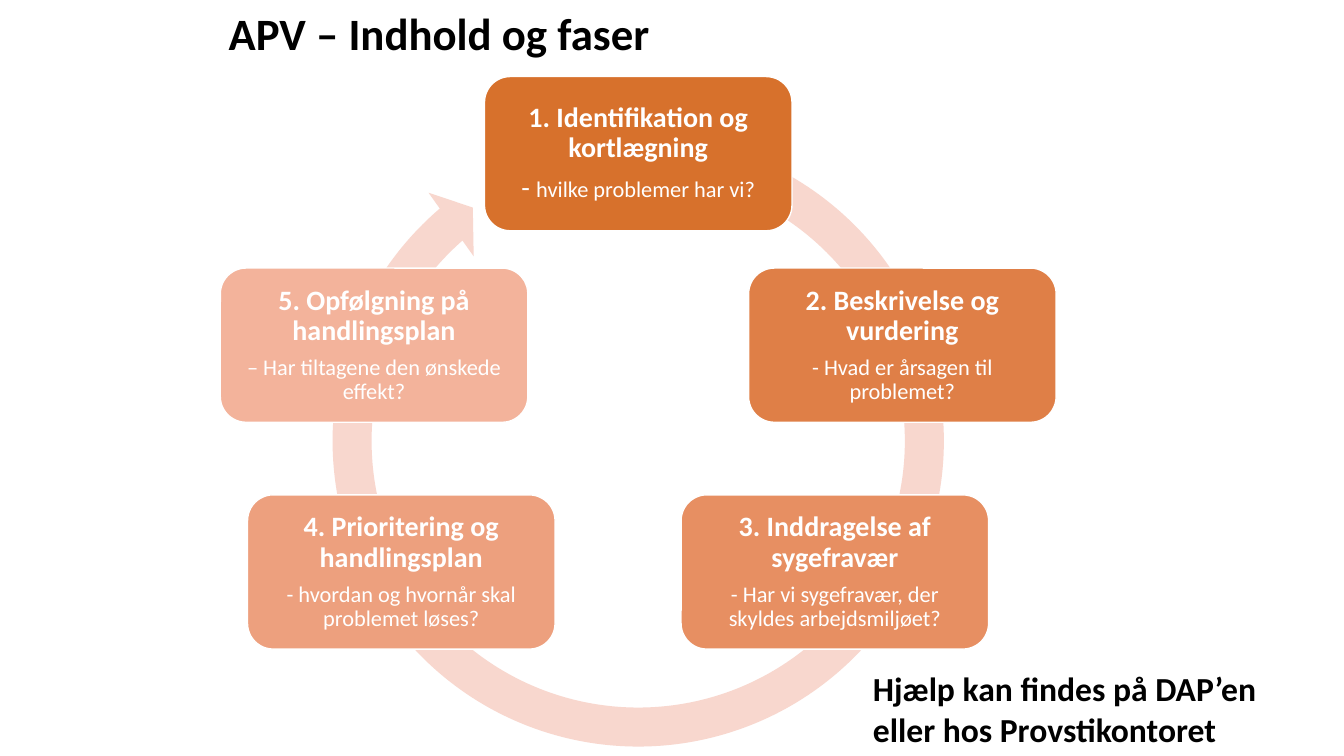
from dataclasses import dataclass

from pptx import Presentation
from pptx import util as u
from pptx.dml.color import RGBColor
from pptx.enum import shapes, text

TITLE = "APV – Indhold og faser"
HELP = "Hjælp kan findes på DAP’en eller hos Provstikontoret"

# heading, dash, question, fill, shift from the cycle's centre line, row
PHASES = [
    ("1. Identifikation og kortlægning", "- ", "hvilke problemer har vi?", "D7712C", 0, 0),
    ("2. Beskrivelse og vurdering", "- ", "Hvad er årsagen til problemet?", "DF7F47", 2.62, 1),
    ("3. Inddragelse af sygefravær", "- ", "Har vi sygefravær, der skyldes arbejdsmiljøet?",
     "E78F62", 1.95, 2),
    ("4. Prioritering og handlingsplan", "- ", "hvordan og hvornår skal problemet løses?",
     "EDA07E", -2.35, 2),
    ("5. Opfølgning på handlingsplan", "– ", "Har tiltagene den ønskede effekt?",
     "F3B39B", -2.62, 1),
]


@dataclass(frozen=True)
class Theme:
    font: str = "Calibri"
    dark: str = "000000"
    light: str = "FFFFFF"
    ring: str = "F8D7CE"
    title: int = 32
    help: int = 24
    heading: int = 20
    question: int = 16


THEME = Theme()
WIDTH, HEIGHT = 13.33, 7.5
CENTRE = 6.33
ROW_TOPS = (0.76, 2.66, 4.91)
BOX_WIDTH, BOX_HEIGHT = 3.05, 1.53
BOX_INSET = 0.08
RING_SIZE, RING_TOP = 6.45, 1.15
RING_ADJUSTMENTS = (0.06, 3.31, 137.5, 174.02, 0.06)


def inches(*lengths):
    return [u.Inches(length) for length in lengths]


def add_run(paragraph, words, size, color, bold=False):
    run = paragraph.add_run()
    run.text = words
    run.font.name = THEME.font
    run.font.size = u.Pt(size)
    run.font.bold = bold
    run.font.color.rgb = RGBColor.from_string(color)


def add_label(slide, box, words, size, spacing=1.0, anchor=text.MSO_ANCHOR.TOP):
    frame = slide.shapes.add_textbox(*inches(*box)).text_frame
    frame.word_wrap = True
    frame.vertical_anchor = anchor
    frame.paragraphs[0].line_spacing = spacing
    add_run(frame.paragraphs[0], words, size, THEME.dark, bold=True)


def add_filled(slide, kind, box, fill):
    shape = slide.shapes.add_shape(kind, *inches(*box))
    shape.shadow.inherit = False
    shape.fill.solid()
    shape.fill.fore_color.rgb = RGBColor.from_string(fill)
    return shape


def add_ring(slide):
    box = (CENTRE - RING_SIZE / 2, RING_TOP, RING_SIZE, RING_SIZE)
    ring = add_filled(slide, shapes.MSO_SHAPE.CIRCULAR_ARROW, box, THEME.ring)
    ring.line.fill.background()
    for index, value in enumerate(RING_ADJUSTMENTS):
        ring.adjustments[index] = value


def add_phase(slide, heading, dash, question, fill, shift, row):
    box = (CENTRE + shift - BOX_WIDTH / 2, ROW_TOPS[row], BOX_WIDTH, BOX_HEIGHT)
    shape = add_filled(slide, shapes.MSO_SHAPE.ROUNDED_RECTANGLE, box, fill)
    shape.line.color.rgb = RGBColor.from_string(THEME.light)
    shape.line.width = u.Pt(1)

    frame = shape.text_frame
    frame.word_wrap = True
    frame.vertical_anchor = text.MSO_ANCHOR.MIDDLE
    frame.margin_left = frame.margin_right = u.Inches(BOX_INSET)
    frame.margin_top = frame.margin_bottom = u.Inches(BOX_INSET)
    first, second = frame.paragraphs[0], frame.add_paragraph()
    for paragraph in (first, second):
        paragraph.alignment = text.PP_ALIGN.CENTER
        paragraph.line_spacing = 0.9
    first.space_after = u.Pt(0.35 * THEME.heading)
    add_run(first, heading, THEME.heading, THEME.light, bold=True)
    dash_size = THEME.heading if row == 0 else THEME.question
    add_run(second, dash, dash_size, THEME.light)
    add_run(second, question, THEME.question, THEME.light)


def main():
    presentation = Presentation()
    presentation.slide_width, presentation.slide_height = inches(WIDTH, HEIGHT)
    slide = presentation.slides.add_slide(presentation.slide_layouts[6])
    add_label(slide, (2.17, -0.27, 9, 1.25), TITLE, THEME.title,
              spacing=0.9, anchor=text.MSO_ANCHOR.MIDDLE)
    add_ring(slide)
    for phase in PHASES:
        add_phase(slide, *phase)
    add_label(slide, (8.56, 6.58, 4.15, 0.91), HELP, THEME.help)
    presentation.save("out.pptx")


if __name__ == "__main__":
    main()
